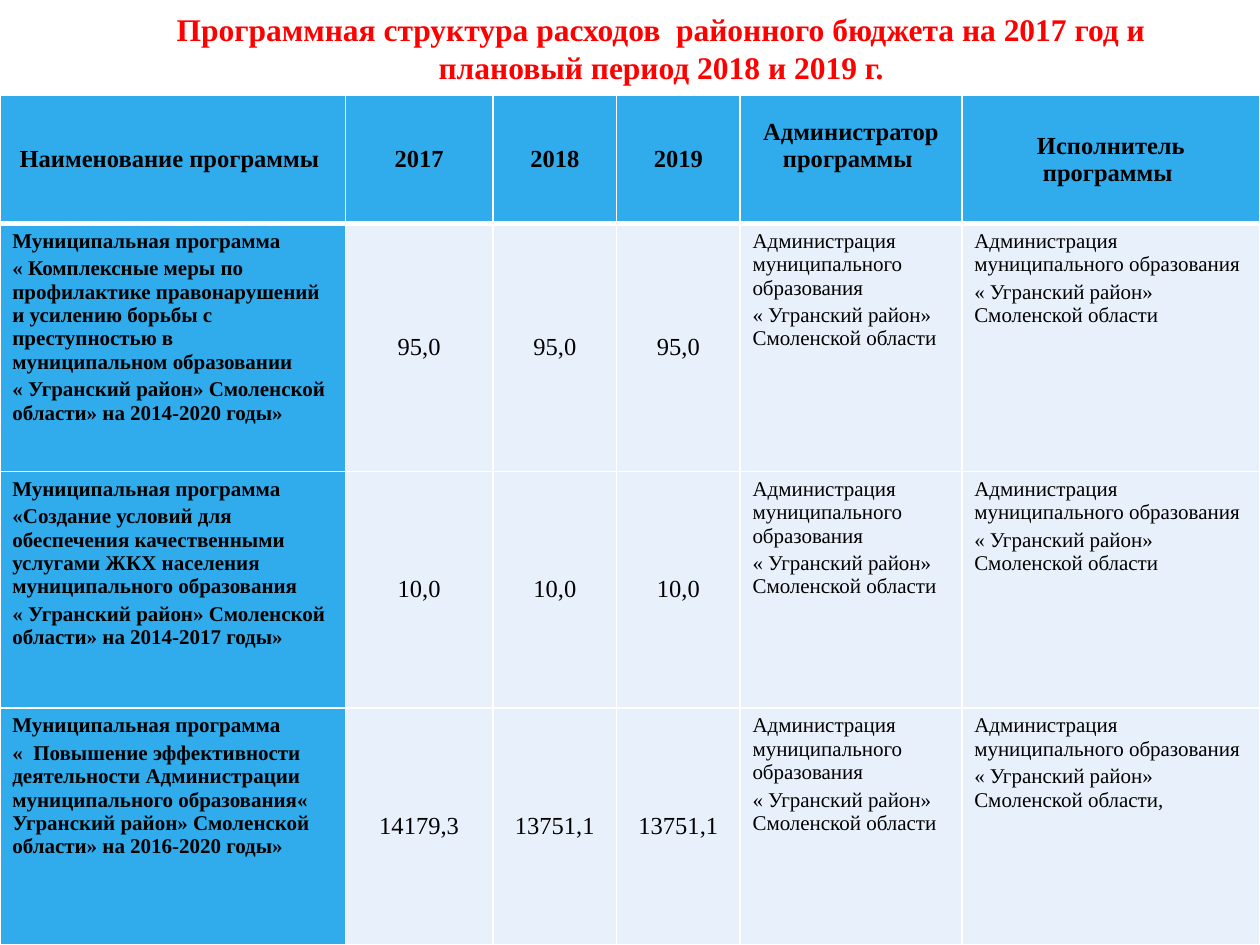
from dataclasses import dataclass

from lxml.etree import SubElement
from pptx import Presentation
from pptx.dml.color import RGBColor
from pptx.enum.text import MSO_ANCHOR as Anchor, PP_ALIGN as Align
from pptx.oxml.ns import qn
from pptx.util import Cm, Pt

FONT = "Times New Roman"
COLORS = {
    "title": "FF0000",
    "text": "000000",
    "accent": "30ACEC",
    "pale": "E8F1FB",
    "border": "FFFFFF",
}
COLUMN_WIDTHS = (6.96, 2.98, 2.49, 2.49, 4.47, 6.01)
ROW_HEIGHTS = (2.57, 5.0, 4.77, 4.77)
TABLE_TOP = 1.93
ADMINISTRATOR_COLUMN = 4

HEADERS = (
    "Наименование программы ", "2017", "2018", "2019",
    "Администратор программы ", "Исполнитель программы ",
)
PROGRAM = "Муниципальная программа"
ADMINISTRATION = "Администрация муниципального образования"
DISTRICT = "« Угранский район» Смоленской области"


@dataclass(frozen=True)
class CellStyle:
    size: int
    bold: bool
    fill: str
    align: Align
    anchor: Anchor


@dataclass(frozen=True)
class Program:
    name: tuple[str, ...]
    amounts: tuple[str, str, str]
    executor_ending: str = ""


HEADER_STYLE = CellStyle(14, True, "accent", Align.CENTER, Anchor.MIDDLE)
NAME_STYLE = CellStyle(12, True, "accent", Align.LEFT, Anchor.TOP)
AMOUNT_STYLE = CellStyle(14, False, "pale", Align.CENTER, Anchor.MIDDLE)
BODY_STYLE = CellStyle(12, False, "pale", Align.LEFT, Anchor.TOP)

PROGRAMS = (
    Program(
        (
            "« Комплексные меры по профилактике правонарушений и усилению "
            "борьбы с преступностью в муниципальном образовании",
            f"{DISTRICT}» на 2014-2020 годы»",
        ),
        ("95,0", "95,0", "95,0"),
    ),
    Program(
        (
            "«Создание условий для обеспечения качественными услугами ЖКХ "
            "населения муниципального образования",
            f"{DISTRICT}» на 2014-2017 годы»",
        ),
        ("10,0", "10,0", "10,0"),
    ),
    Program(
        (
            "«  Повышение эффективности  деятельности Администрации "
            f"муниципального образования{DISTRICT}» на 2016-2020 годы»",
        ),
        ("14179,3", "13751,1", "13751,1"),
        ",",
    ),
)


def color(name: str) -> RGBColor:
    return RGBColor.from_string(COLORS[name])


def add_run(para, text: str, size: int, bold: bool, color_name: str) -> None:
    span = para.add_run()
    span.text = text
    span.font.name = FONT
    span.font.size = Pt(size)
    span.font.bold = bold
    span.font.color.rgb = color(color_name)


def add_borders(cell, widths: dict[str, int]) -> None:
    """Add the cell's edge lines, in points, in schema order; call before filling."""
    properties = cell._tc.get_or_add_tcPr()
    for edge, width in widths.items():
        line = SubElement(properties, qn(f"a:{edge}"), w=str(Pt(width)))
        fill = SubElement(line, qn("a:solidFill"))
        SubElement(fill, qn("a:srgbClr"), val=COLORS["border"])


def fill_cell(cell, texts: tuple[str, ...], style: CellStyle, row: int) -> None:
    add_borders(cell, {
        "lnL": 1, "lnR": 1,
        "lnT": 3 if row == 1 else 1,
        "lnB": 3 if row == 0 else 1,
    })
    cell.fill.solid()
    cell.fill.fore_color.rgb = color(style.fill)
    cell.vertical_anchor = style.anchor
    cell.margin_left = cell.margin_right = Cm(0.25)
    cell.margin_top = cell.margin_bottom = Cm(0.13)
    for index, text in enumerate(texts):
        para = cell.text_frame.add_paragraph() if index else cell.text_frame.paragraphs[0]
        para.alignment = style.align
        if index:
            para.space_before = Pt(style.size * 0.2)
        add_run(para, text, style.size, style.bold, "text")


def add_title(page) -> None:
    box = page.shapes.add_textbox(Cm(1.9), Cm(0), Cm(22.86), Cm(TABLE_TOP))
    frame = box.text_frame
    frame.word_wrap = True
    frame.vertical_anchor = Anchor.MIDDLE
    para = frame.paragraphs[0]
    para.alignment = Align.CENTER
    add_run(
        para,
        "Программная структура расходов  районного бюджета на 2017 год и "
        "плановый период 2018 и 2019 г.",
        18, True, "title",
    )


def add_program_table(page) -> None:
    table = page.shapes.add_table(
        len(ROW_HEIGHTS), len(COLUMN_WIDTHS), Cm(0), Cm(TABLE_TOP),
        Cm(sum(COLUMN_WIDTHS)), Cm(sum(ROW_HEIGHTS)),
    ).table
    table.horz_banding = False
    for column, width in zip(table.columns, COLUMN_WIDTHS):
        column.width = Cm(width)
    for row, height in zip(table.rows, ROW_HEIGHTS):
        row.height = Cm(height)

    for column, header in enumerate(HEADERS):
        fill_cell(table.cell(0, column), (header,), HEADER_STYLE, 0)
    table.cell(0, ADMINISTRATOR_COLUMN).margin_bottom = Cm(0.67)

    for row, program in enumerate(PROGRAMS, start=1):
        contents = (
            ((PROGRAM, *program.name), NAME_STYLE),
            *(((amount,), AMOUNT_STYLE) for amount in program.amounts),
            ((ADMINISTRATION, DISTRICT), BODY_STYLE),
            ((ADMINISTRATION, DISTRICT + program.executor_ending), BODY_STYLE),
        )
        for column, (texts, style) in enumerate(contents):
            fill_cell(table.cell(row, column), texts, style, row)


def main() -> None:
    deck = Presentation()
    deck.slide_width, deck.slide_height = Cm(25.4), Cm(19.05)
    page = deck.slides.add_slide(deck.slide_layouts[6])
    add_title(page)
    add_program_table(page)
    deck.save("out.pptx")


if __name__ == "__main__":
    main()
